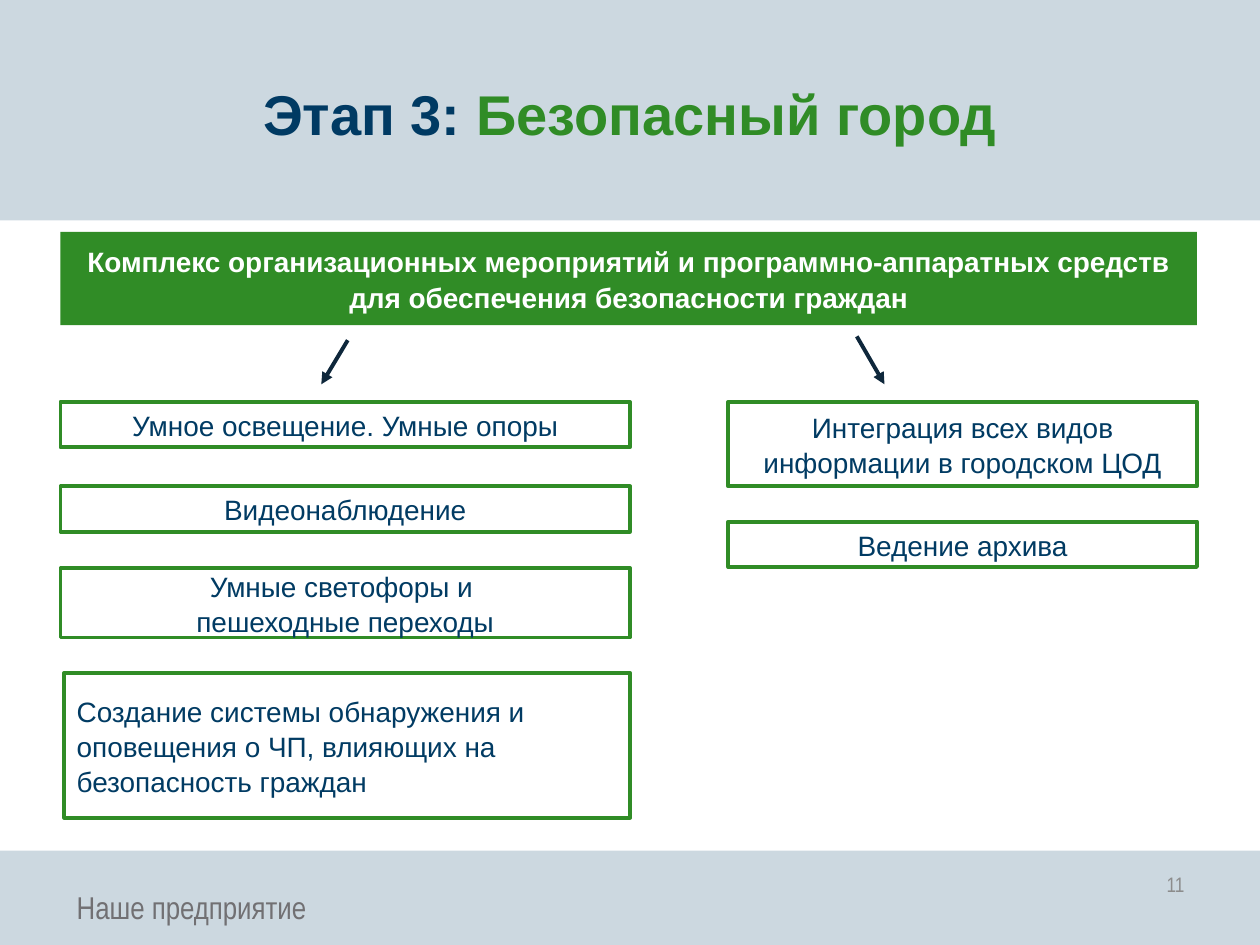
from lxml.etree import SubElement
from pptx import Presentation
from pptx.dml.color import RGBColor
from pptx.enum.shapes import MSO_CONNECTOR as Link, MSO_SHAPE as Kind
from pptx.enum.text import MSO_ANCHOR as Anchor, PP_ALIGN as Align
from pptx.oxml.ns import qn
from pptx.util import Inches, Pt

COLS, ROWS = 100, 75
CELL = Inches(10) // COLS
GREEN, NAVY, PALE = "308C26", "003A63", "CCD8E0"
INK, DARK, WHITE = "013B63", "0E273B", "FFFFFF"
LEFT, RIGHT = (4.8, 45.2), (57.8, 37.2)


def grid(*cells):
    """Turn grid cells into lengths."""
    return [round(n * CELL) for n in cells]


def hue(code):
    """Turn a hex string into a colour."""
    return RGBColor.from_string(code)


def style(para, size, color, face="Arial", bold=False, align=Align.LEFT):
    """Set the font and alignment of a paragraph."""
    para.alignment = align
    font = para.font
    font.size, font.name, font.bold = Pt(size), face, bold
    if color:
        font.color.rgb = hue(color)


def block(slide, area, fill, edge=None):
    """Add a plain filled rectangle."""
    shape = slide.shapes.add_shape(Kind.RECTANGLE, *grid(*area))
    shape.shadow.inherit = False
    shape.fill.solid()
    shape.fill.fore_color.rgb = hue(fill)
    if edge:
        shape.line.color.rgb = hue(edge)
        shape.line.width = Pt(2.25)
    else:
        shape.line.fill.background()
    return shape


def card(slide, area, text, fill=WHITE, edge=GREEN, color=INK,
         bold=False, align=Align.CENTER):
    """Add a rectangle with a caption."""
    frame = block(slide, area, fill, edge).text_frame
    frame.word_wrap = True
    frame.vertical_anchor = Anchor.MIDDLE
    para = frame.paragraphs[0]
    para.text = text
    para.line_spacing = 1.05
    style(para, 16, color, bold=bold, align=align)


def label(slide, area, parts, size, face="Arial", bold=False,
          align=Align.LEFT, anchor=Anchor.TOP):
    """Add a text box made of (text, colour) parts."""
    frame = slide.shapes.add_textbox(*grid(*area)).text_frame
    frame.word_wrap = True
    frame.vertical_anchor = anchor
    para = frame.paragraphs[0]
    style(para, size, None, face, bold, align)
    for text, color in parts:
        run = para.add_run()
        run.text = text
        run.font.color.rgb = hue(color)


def arrow(slide, *ends):
    """Add a straight line with an arrowhead at its end."""
    line = slide.shapes.add_connector(Link.STRAIGHT, *grid(*ends))
    line.line.color.rgb = hue(DARK)
    line.line.width = Pt(2.25)
    SubElement(line.line._get_or_add_ln(), qn("a:tailEnd"), type="triangle")
    SubElement(line._element.spPr, qn("a:effectLst"))


def main():
    """Build the slide and save it."""
    deck = Presentation()
    deck.slide_width, deck.slide_height = grid(COLS, ROWS)
    slide = deck.slides.add_slide(deck.slide_layouts[6])

    for top, high in ((67.5, 7.5), (0, 17.5)):
        block(slide, (0, top, COLS, high), PALE)
    label(slide, (5.1, 70, 44.9, 3.4), [("Наше предприятие", "717073")],
          18, "Arial Narrow")
    label(slide, (71.7, 68.2, 23.3, 4), [("11", "8C8C8C")], 12,
          "Arial Narrow", align=Align.RIGHT, anchor=Anchor.MIDDLE)
    label(slide, (15.5, 5.8, 69, 6.4),
          [("Этап 3: ", NAVY), ("Безопасный город", GREEN)],
          32, bold=True, align=Align.CENTER)

    card(slide, (4.8, 18.4, 90.2, 7.4),
         "Комплекс организационных мероприятий и программно-аппаратных "
         "средств для обеспечения безопасности граждан",
         GREEN, None, WHITE, True)
    arrow(slide, 27.6, 27, 25.5, 30.5)
    arrow(slide, 68, 26.7, 70.2, 30.5)

    for (left, wide), top, high, text in (
        (LEFT, 31.9, 3.6, "Умное освещение. Умные опоры"),
        (LEFT, 38.6, 3.6, "Видеонаблюдение"),
        (LEFT, 45.1, 5.5, "Умные светофоры и \nпешеходные переходы"),
        (RIGHT, 31.9, 6.7, "Интеграция всех видов информации в городском ЦОД"),
        (RIGHT, 41.4, 3.6, "Ведение архива"),
    ):
        card(slide, (left, top, wide, high), text)
    card(slide, (5.1, 53.4, 44.9, 11.5),
         "Создание системы обнаружения и оповещения о ЧП, "
         "влияющих на безопасность граждан", align=Align.LEFT)

    deck.save("out.pptx")


if __name__ == "__main__":
    main()
